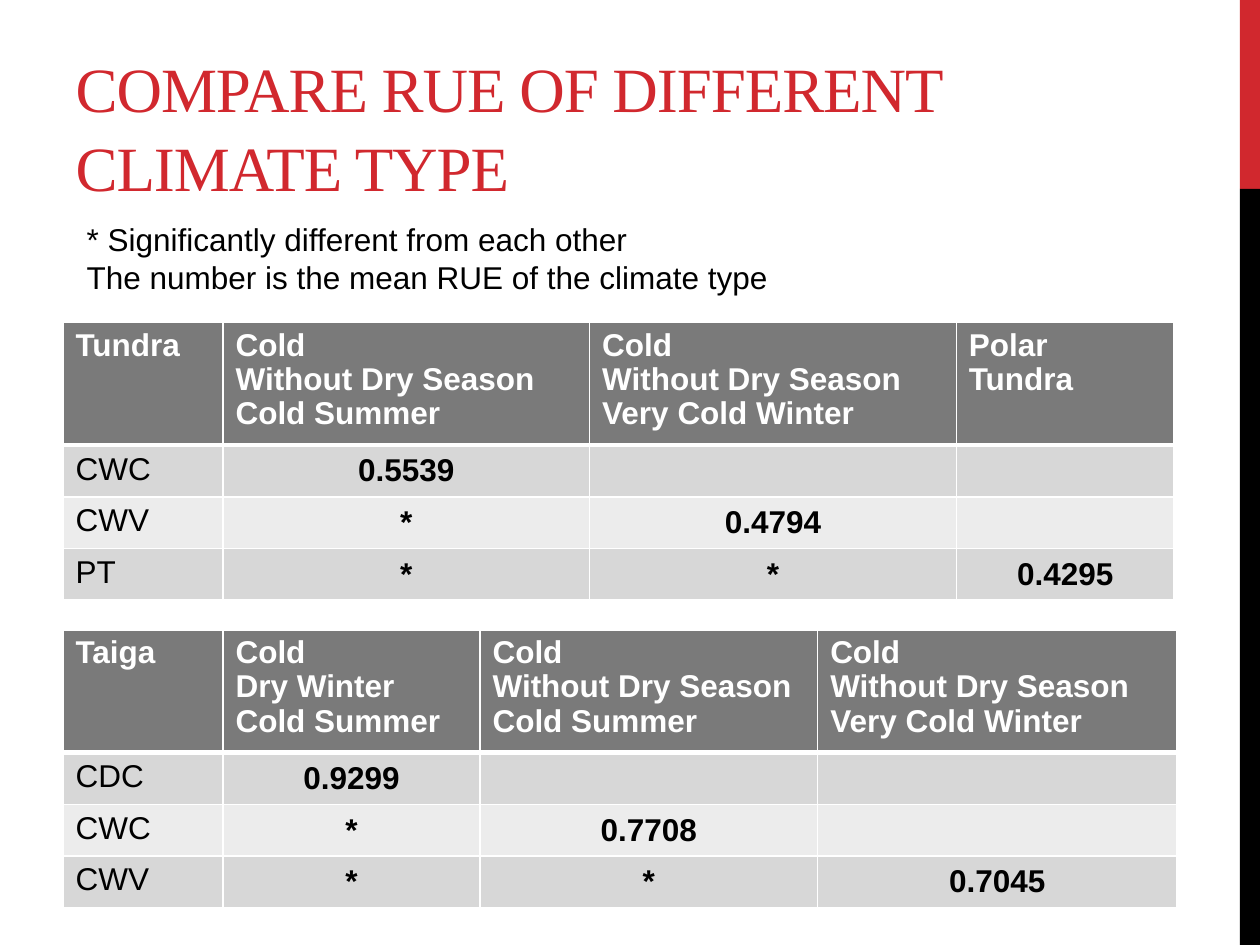
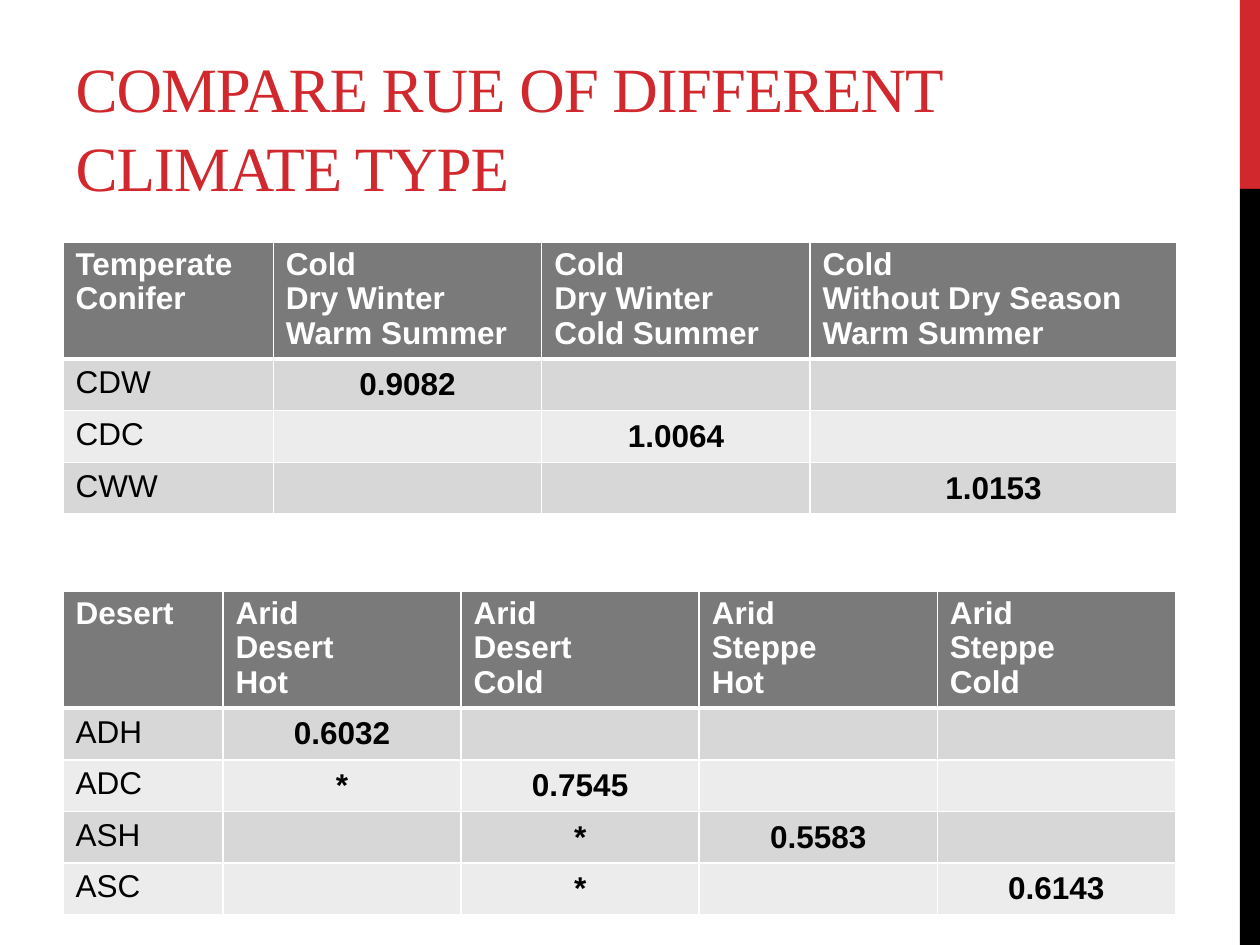
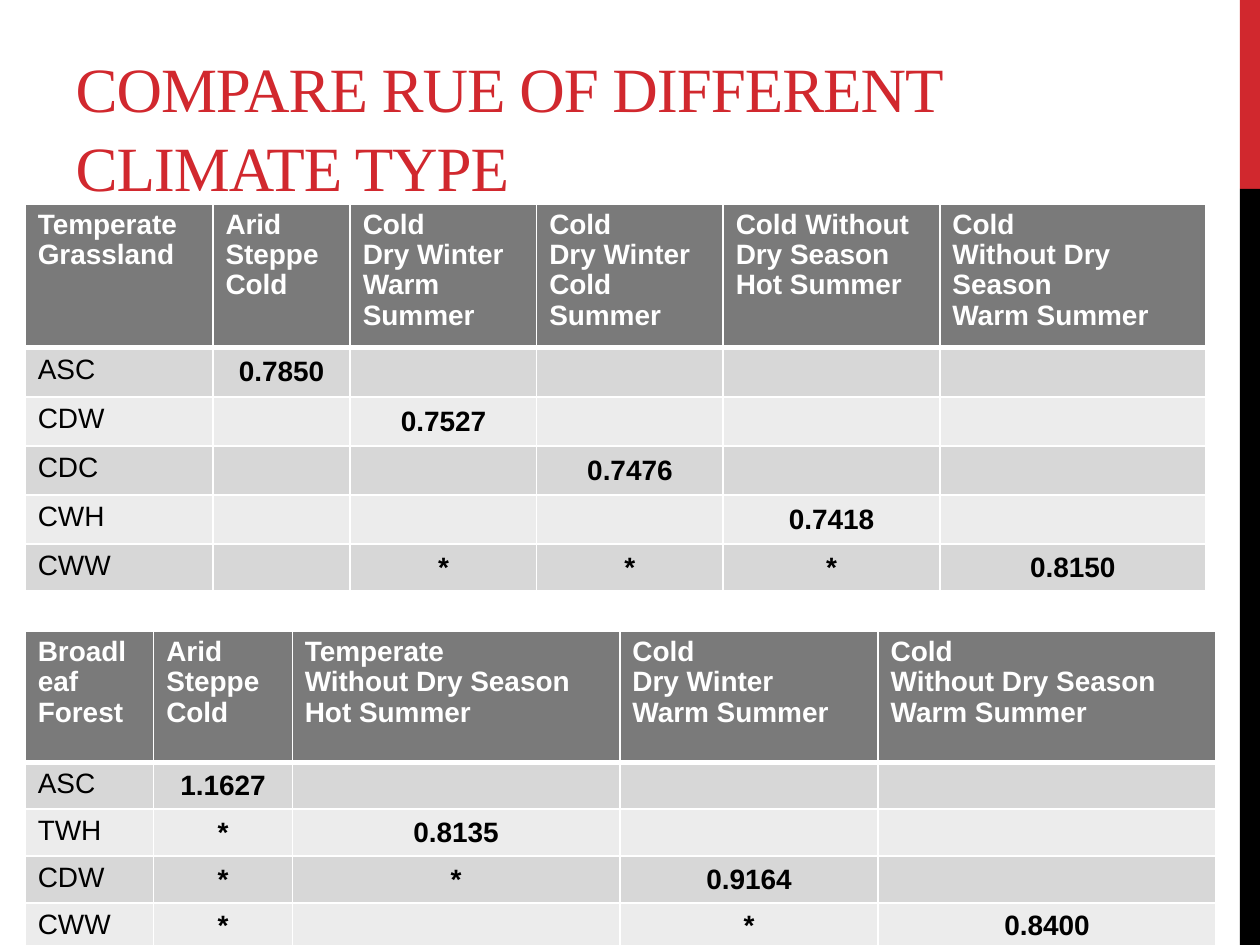
from lxml import etree
from pptx import Presentation
from pptx.dml.color import RGBColor
from pptx.enum import shapes, text
from pptx.oxml.ns import qn
from pptx.util import Inches, Pt

RED = RGBColor(0xD1, 0x28, 0x2E)
BLACK = RGBColor(0, 0, 0)
WHITE = RGBColor(255, 255, 255)
HEADER_GRAY = RGBColor(0x7A, 0x7A, 0x7A)
ROW_GRAYS = (RGBColor(0xD7, 0xD7, 0xD7), RGBColor(0xEC, 0xEC, 0xEC))

HEADING = "COMPARE RUE OF DIFFERENT CLIMATE TYPE"

# Column heading of each climate code
CLIMATES = {
    "ADH": "Arid\nDesert\nHot",
    "ADC": "Arid\nDesert\nCold",
    "ASH": "Arid\nSteppe\nHot",
    "ASC": "Arid\nSteppe\nCold",
    "TWH": "Temperate\nWithout Dry Season\nHot Summer",
    "CDW": "Cold\nDry Winter\nWarm Summer",
    "CDC": "Cold\nDry Winter\nCold Summer",
    "CWH": "Cold Without Dry Season\nHot Summer",
    "CWW": "Cold\nWithout Dry Season\nWarm Summer",
    "CWC": "Cold\nWithout Dry Season\nCold Summer",
    "CWV": "Cold\nWithout Dry Season\nVery Cold Winter",
    "PT": "Polar\nTundra",
}


class Deck:
    """Holds the shared style and the slide being filled."""

    heading_font, body_font = "Times New Roman", "Arial"

    def __init__(self):
        self.prs = Presentation()
        self.prs.slide_width, self.prs.slide_height = Inches(10), Inches(7.5)
        self.slide = None

    def add_slide(self, heading):
        self.slide = self.prs.slides.add_slide(self.prs.slide_layouts[5])
        self.band(0, 1.5, RED)
        self.band(1.5, 6, BLACK)
        self.title(heading)

    def band(self, top, height, color):
        band = self.slide.shapes.add_shape(
            shapes.MSO_SHAPE.RECTANGLE, Inches(9.84), Inches(top), Inches(0.16), Inches(height))
        band.shadow.inherit = False
        band.fill.solid()
        band.fill.fore_color.rgb = color
        band.line.fill.background()

    def style(self, frame, size, color, font=body_font, bold=False):
        for paragraph in frame.paragraphs:
            for run in paragraph.runs:
                run.font.name, run.font.size, run.font.bold = font, Pt(size), bold
                run.font.color.rgb = color

    def title(self, heading):
        title = self.slide.shapes.title
        title.left, title.top = Inches(0.5), Inches(0.17)
        title.width, title.height = Inches(8.44), Inches(1.5)
        frame = title.text_frame
        frame.text = heading
        frame.auto_size = text.MSO_AUTO_SIZE.NONE
        frame.vertical_anchor = text.MSO_ANCHOR.BOTTOM
        line = frame.paragraphs[0]
        line.alignment = text.PP_ALIGN.LEFT
        line.line_spacing = 1.05
        self.style(frame, 36, RED, self.heading_font)
        line.runs[0].font._element.set("spc", "-60")

    def note(self, left, top, width, height, words):
        frame = self.slide.shapes.add_textbox(
            Inches(left), Inches(top), Inches(width), Inches(height)).text_frame
        frame.word_wrap = True
        frame.text = words
        self.style(frame, 18, BLACK)

    def borders(self, cell, top, bottom):
        properties = cell._tc.get_or_add_tcPr()
        for side, width in (("L", 1), ("R", 1), ("T", top), ("B", bottom)):
            line = etree.SubElement(properties, qn(f"a:ln{side}"), w=str(Pt(width)))
            fill = etree.SubElement(line, qn("a:solidFill"))
            etree.SubElement(fill, qn("a:srgbClr"), val=str(WHITE))

    def cell(self, cell, words, row, column, size):
        header = row == 0
        self.borders(cell, 3 if row == 1 else 1, 3 if header else 1)
        cell.fill.solid()
        cell.fill.fore_color.rgb = HEADER_GRAY if header else ROW_GRAYS[(row - 1) % 2]
        frame = cell.text_frame
        frame.text = words
        self.style(frame, size, WHITE if header else BLACK, bold=header or column > 0)
        if header:
            for paragraph in frame.paragraphs:
                paragraph.line_spacing = 0.97
        elif column:
            cell.vertical_anchor = text.MSO_ANCHOR.MIDDLE
            frame.paragraphs[0].alignment = text.PP_ALIGN.CENTER
        if not words:  # an empty cell keeps the row as low as the text does
            etree.SubElement(frame.paragraphs[0]._p, qn("a:endParaRPr"), sz=str(size * 100))

    def climate_table(self, biome, left, top, widths, heights, means, different, size=18):
        """Means lie on the diagonal; `different` lists the starred columns by row."""
        rows = [[biome] + [CLIMATES[code] for code in means]]
        for code, mean in means.items():
            starred = different.get(code, ())
            rows.append([code] + [mean if other == code else "*" if other in starred else ""
                                  for other in means])
        header_height, *row_heights = heights
        if len(row_heights) == 1:
            row_heights *= len(means)
        heights = [header_height, *row_heights]
        table = self.slide.shapes.add_table(
            len(rows), len(widths), Inches(left), Inches(top),
            Inches(sum(widths)), Inches(sum(heights))).table
        table.first_row = table.horz_banding = False
        for column, width in zip(table.columns, widths):
            column.width = Inches(width)
        for r, (height, row) in enumerate(zip(heights, rows)):
            table.rows[r].height = Inches(height)
            for c, words in enumerate(row):
                self.cell(table.cell(r, c), words, r, c, size)


def main():
    deck = Deck()

    # Tundra and taiga
    deck.add_slide(HEADING)
    deck.note(0.59, 1.7, 8.74, 0.71,
              "* Significantly different from each other\n"
              "The number is the mean RUE of the climate type")
    deck.climate_table(
        "Tundra", 0.5, 2.56, [1.27, 2.91, 2.91, 1.73], [0.93, 0.41],
        {"CWC": "0.5539", "CWV": "0.4794", "PT": "0.4295"},
        {"CWV": ["CWC"], "PT": ["CWC", "CWV"]})
    deck.climate_table(
        "Taiga", 0.5, 5, [1.27, 2.04, 2.68, 2.85], [0.93, 0.41],
        {"CDC": "0.9299", "CWC": "0.7708", "CWV": "0.7045"},
        {"CWC": ["CDC"], "CWV": ["CDC", "CWC"]})

    # Temperate conifer and desert
    deck.add_slide(HEADING)
    deck.climate_table(
        "Temperate Conifer", 0.5, 1.92, [1.67, 2.13, 2.13, 2.91], [0.93, 0.41],
        {"CDW": "0.9082", "CDC": "1.0064", "CWW": "1.0153"}, {})
    deck.climate_table(
        "Desert", 0.5, 4.69, [1.27] + [1.89] * 4, [0.93, 0.41],
        {"ADH": "0.6032", "ADC": "0.7545", "ASH": "0.5583", "ASC": "0.6143"},
        {"ADC": ["ADH"], "ASH": ["ADC"], "ASC": ["ADC"]})

    # Temperate grassland and broadleaf forest
    deck.add_slide(HEADING)
    deck.climate_table(
        "Temperate Grassland", 0.2, 1.62, [1.49, 1.09, 1.48, 1.48, 1.72, 2.11],
        [1.14] + [0.39] * 4 + [0.36],
        {"ASC": "0.7850", "CDW": "0.7527", "CDC": "0.7476", "CWH": "0.7418", "CWW": "0.8150"},
        {"CWW": ["CDW", "CDC", "CWH"]}, size=16)
    deck.climate_table(
        "Broadleaf Forest", 0.2, 5.01, [1.02, 1.1, 2.6, 2.05, 2.68], [1.04, 0.36],
        {"ASC": "1.1627", "TWH": "0.8135", "CDW": "0.9164", "CWW": "0.8400"},
        {"TWH": ["ASC"], "CDW": ["ASC", "TWH"], "CWW": ["ASC", "CDW"]}, size=16)

    deck.prs.save("out.pptx")


if __name__ == "__main__":
    main()
